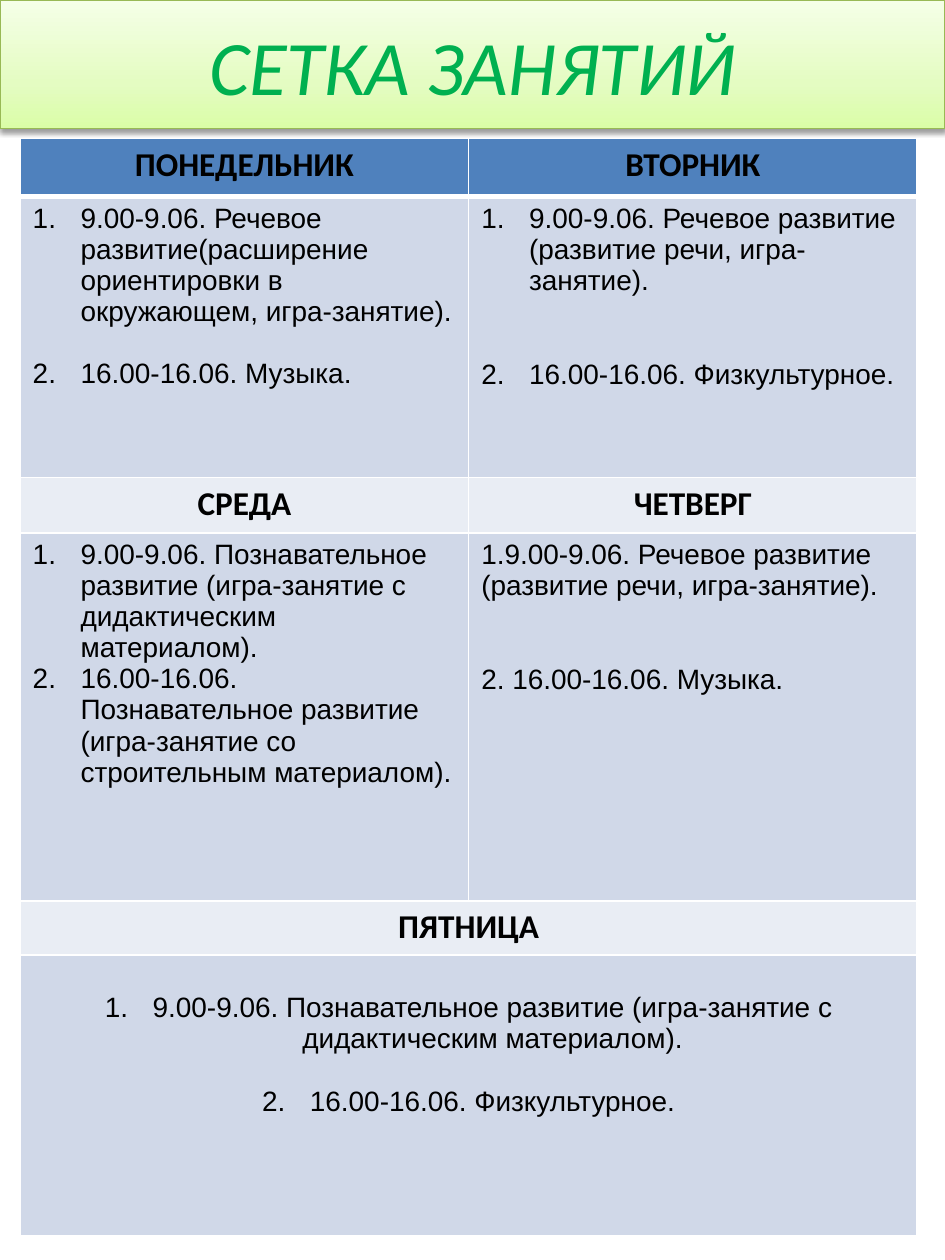
from pptx import Presentation
from pptx.dml.color import RGBColor
from pptx.enum.shapes import MSO_SHAPE
from pptx.enum.text import MSO_ANCHOR, PP_ALIGN
from pptx.oxml import parse_xml
from pptx.oxml.ns import nsdecls
from pptx.util import Inches, Pt

# Content: an item is (blank lines before it, text)
TITLE = "СЕТКА ЗАНЯТИЙ"
SPEECH = "(развитие речи, игра-занятие)."
DIDACTIC = "9.00-9.06. Познавательное развитие (игра-занятие с дидактическим материалом)."
SPORT = "16.00-16.06. Физкультурное."
DAYS = [
    {"name": "ПОНЕДЕЛЬНИК", "numbered": True, "items": [
        (0, "9.00-9.06. Речевое развитие(расширение ориентировки в окружающем, игра-занятие)."),
        (1, "16.00-16.06. Музыка.")]},
    {"name": "ВТОРНИК", "numbered": True, "items": [
        (0, f"9.00-9.06. Речевое развитие {SPEECH}"), (2, SPORT)]},
    {"name": "СРЕДА", "numbered": True, "items": [
        (0, DIDACTIC),
        (0, "16.00-16.06. Познавательное развитие (игра-занятие со строительным материалом).")]},
    {"name": "ЧЕТВЕРГ", "numbered": False, "items": [
        (0, f"1.9.00-9.06. Речевое развитие {SPEECH}"), (2, "2. 16.00-16.06. Музыка.")]},
    {"name": "ПЯТНИЦА", "numbered": True, "wide": True, "items": [(1, DIDACTIC), (1, SPORT)]},
]

# Look
COLORS = {"header": "4F81BD", "day": "E9EDF4", "lessons": "D0D8E8", "border": "FFFFFF",
          "text": "000000", "title": "00B050", "banner line": "98B955"}
GRADIENT = [(0, "DAFDA7"), (35, "E4FCC2"), (100, "F5FFE7")]
TITLE_FONT = {"name": "Calibri", "size": Pt(44), "italic": True}
DAY_FONT = {"name": "Calibri", "size": Pt(19), "bold": True}
LESSON_FONT = {"name": "Arial", "size": Pt(16), "bold": False}

# Grid
WIDTH, HEIGHT = 7.5, 10
BANNER_HEIGHT = 1.02
LEFT, TOP = 0.16, 1.1
COLUMNS = 2
COLUMN_WIDTH = 3.56
ROW_HEIGHTS = [0.46, 2.23, 0.44, 2.92, 0.43, 2.23]
LINE_HEIGHT = 17.9
CELL_MARGIN = 0.05
INDENT = Inches(0.38)


def color(name):
    return RGBColor.from_string(COLORS[name])


def write(para, text, font, color_name="text", align=None):
    span = para.add_run()
    span.text = text
    para.alignment = align
    for key, value in font.items():
        setattr(span.font, key, value)
    span.font.color.rgb = color(color_name)


def number(para):
    properties = para._p.get_or_add_pPr()
    properties.set("marL", str(INDENT))
    properties.set("indent", str(-INDENT))
    properties.append(parse_xml(f'<a:buFont {nsdecls("a")} typeface="+mj-lt"/>'))
    properties.append(parse_xml(f'<a:buAutoNum {nsdecls("a")} type="arabicPeriod"/>'))


def style_cell(cell, row, fill_name):
    thick = {0: "B", 1: "T"}.get(row)
    for side in "LRTB":
        width = Pt(3 if side == thick else 1)
        cell._tc.get_or_add_tcPr().append(parse_xml(
            f'<a:ln{side} {nsdecls("a")} w="{width}"><a:solidFill>'
            f'<a:srgbClr val="{COLORS["border"]}"/></a:solidFill></a:ln{side}>'))
    cell.fill.solid()
    cell.fill.fore_color.rgb = color(fill_name)


def fill_lessons(cell, day):
    frame = cell.text_frame
    for index, (blank_lines, text) in enumerate(day["items"]):
        para = frame.add_paragraph() if index else frame.paragraphs[0]
        gap = blank_lines * LINE_HEIGHT
        if index:
            para.space_before = Pt(gap)
        else:
            cell.margin_top = Inches(CELL_MARGIN) + Pt(gap)
        if day["numbered"]:
            number(para)
        write(para, text, LESSON_FONT, align=PP_ALIGN.CENTER if day.get("wide") else PP_ALIGN.LEFT)


def add_banner(page):
    banner = page.shapes.add_shape(MSO_SHAPE.RECTANGLE, 0, 0, Inches(WIDTH), Inches(BANNER_HEIGHT))
    banner.line.color.rgb = color("banner line")
    banner.line.width = Pt(0.75)
    stops = "".join(f'<a:gs pos="{share * 1000}"><a:srgbClr val="{tint}"/></a:gs>'
                    for share, tint in GRADIENT)
    outline = banner.line._ln
    outline.addprevious(parse_xml(
        f'<a:gradFill {nsdecls("a")} rotWithShape="1"><a:gsLst>{stops}</a:gsLst>'
        '<a:lin ang="16200000" scaled="1"/></a:gradFill>'))
    outline.addnext(parse_xml(
        f'<a:effectLst {nsdecls("a")}><a:outerShdw blurRad="{Pt(3.1)}" dist="{Pt(1.6)}" '
        'dir="5400000" rotWithShape="0"><a:srgbClr val="000000"><a:alpha val="38000"/>'
        '</a:srgbClr></a:outerShdw></a:effectLst>'))
    banner.text_frame.vertical_anchor = MSO_ANCHOR.MIDDLE
    write(banner.text_frame.paragraphs[0], TITLE, TITLE_FONT, "title", PP_ALIGN.CENTER)


def add_timetable(page):
    table = page.shapes.add_table(
        len(ROW_HEIGHTS), COLUMNS, Inches(LEFT), Inches(TOP),
        Inches(COLUMNS * COLUMN_WIDTH), Inches(sum(ROW_HEIGHTS))).table
    table.first_row = table.horz_banding = False
    for column in table.columns:
        column.width = Inches(COLUMN_WIDTH)
    for row, height in enumerate(ROW_HEIGHTS):
        table.rows[row].height = Inches(height)
        fill_name = "lessons" if row % 2 else "day" if row else "header"
        for column in range(COLUMNS):
            style_cell(table.cell(row, column), row, fill_name)

    # Each day takes a name cell and the lessons cell below it
    for index, day in enumerate(DAYS):
        row, column = index // COLUMNS * 2, index % COLUMNS
        name_cell, lessons_cell = table.cell(row, column), table.cell(row + 1, column)
        if day.get("wide"):
            name_cell.merge(table.cell(row, COLUMNS - 1))
            lessons_cell.merge(table.cell(row + 1, COLUMNS - 1))
        write(name_cell.text_frame.paragraphs[0], day["name"], DAY_FONT, align=PP_ALIGN.CENTER)
        fill_lessons(lessons_cell, day)


def main():
    deck = Presentation()
    deck.slide_width, deck.slide_height = Inches(WIDTH), Inches(HEIGHT)
    page = deck.slides.add_slide(deck.slide_layouts[6])
    add_banner(page)
    add_timetable(page)
    deck.save("out.pptx")


if __name__ == "__main__":
    main()
